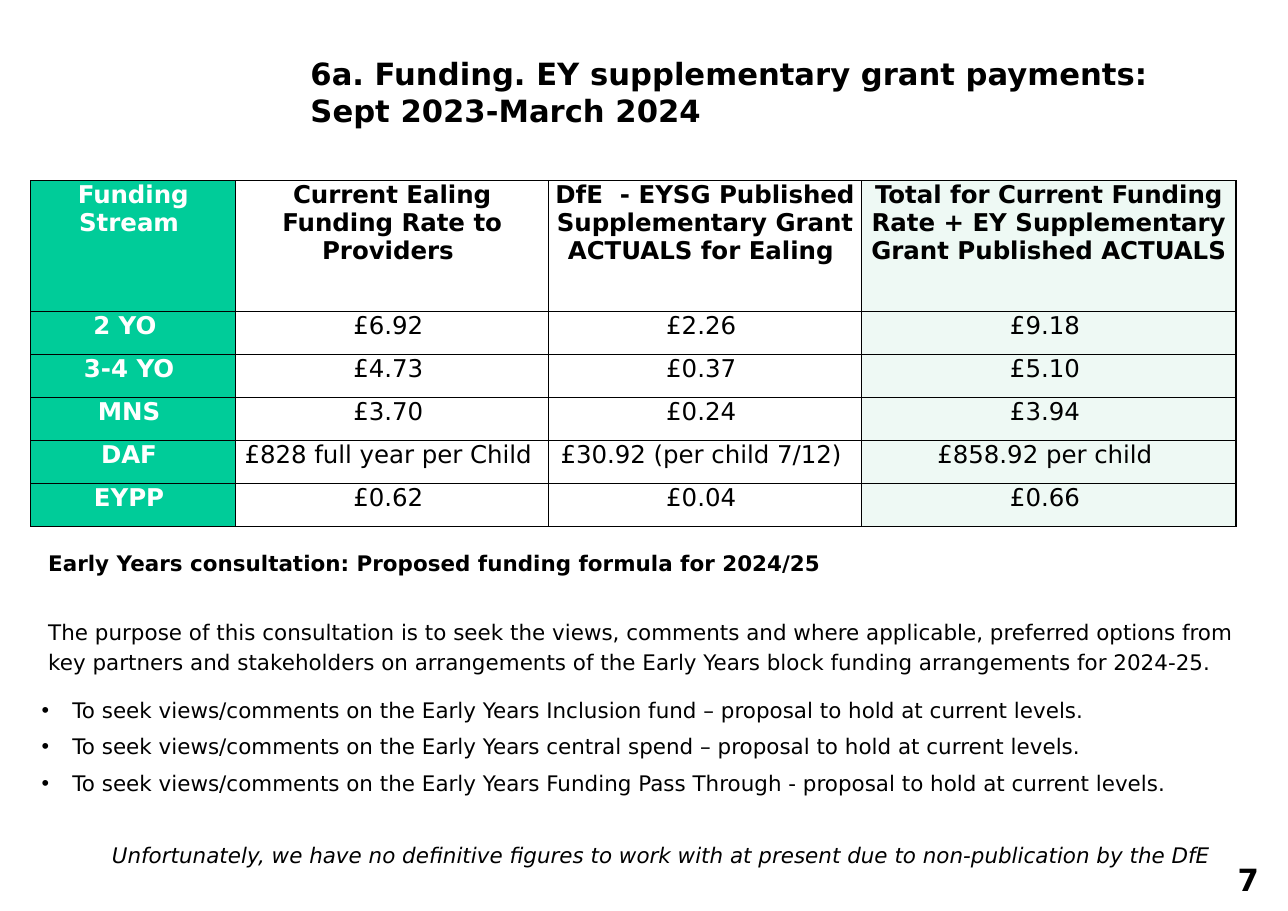
"""Builds the slide on Early Years supplementary grant payments and the 2024/25 consultation."""
from lxml.etree import SubElement
from pptx import Presentation
from pptx.dml.color import RGBColor
from pptx.enum.text import MSO_AUTO_SIZE, PP_ALIGN
from pptx.oxml.ns import qn
from pptx.util import Inches, Pt

BLACK = RGBColor(0, 0, 0)
WHITE = RGBColor(255, 255, 255)
GREEN = RGBColor(0, 204, 153)
MINT = RGBColor(238, 249, 244)


def write(paragraph, text, size, color=BLACK, **font_format):
    """Add one formatted run to a paragraph."""
    run = paragraph.add_run()
    run.text = text
    run.font.name = "DejaVu Sans"
    run.font.size = Pt(size)
    run.font.color.rgb = color
    for name, value in font_format.items():
        setattr(run.font, name, value)


def add_text_frame(left, top, width, height):
    """Add a wrapping text box and return its frame."""
    box = slide.shapes.add_textbox(Inches(left), Inches(top), Inches(width), Inches(height))
    box.text_frame.word_wrap = True
    box.text_frame.auto_size = MSO_AUTO_SIZE.SHAPE_TO_FIT_TEXT
    return box.text_frame


presentation = Presentation()
presentation.slide_width = Inches(11.69)
presentation.slide_height = Inches(8.27)
slide = presentation.slides.add_slide(presentation.slide_layouts[6])

CONSULTATION = [
    ("Early Years consultation: Proposed funding formula for 2024/25",
     {"bold": True}, {}, 0.06, False),
    ("The purpose of this consultation is to seek the views, comments and where applicable, "
     "preferred options from key partners and stakeholders on arrangements of the Early Years "
     "block funding arrangements for 2024-25.",
     {}, {"space_before": Pt(26), "space_after": Pt(7.5)}, 0.06, False),
    ("To seek views/comments on the Early Years Inclusion fund – proposal to hold at current levels.",
     {}, {"space_before": Pt(4.5)}, 0.28, True),
    ("To seek views/comments on the Early Years central spend – proposal to hold at current levels.",
     {}, {"space_before": Pt(4.5)}, 0.28, True),
    ("To seek views/comments on the Early Years Funding Pass Through - proposal to hold at current levels.",
     {}, {"space_before": Pt(4.5)}, 0.28, True),
    ("Unfortunately, we have no definitive figures to work with at present due to non-publication by the DfE ",
     {"italic": True},
     {"space_before": Pt(28), "space_after": Pt(7.5), "alignment": PP_ALIGN.CENTER}, 0.38, False),
]
consultation = add_text_frame(0.28, 4.91, 11.13, 3.08)
for index, (text, font_format, spacing, indent, bulleted) in enumerate(CONSULTATION):
    paragraph = consultation.add_paragraph() if index else consultation.paragraphs[0]
    paragraph.line_spacing = 1.15
    for name, value in spacing.items():
        setattr(paragraph, name, value)
    write(paragraph, text, 14, **font_format)
    properties = paragraph._p.get_or_add_pPr()
    properties.set("marL", str(Inches(indent)))
    properties.set("indent", str(Inches(-indent if bulleted else 0)))
    if bulleted:
        SubElement(properties, qn("a:buFont"), typeface="Arial")
        SubElement(properties, qn("a:buChar"), char="•")

title = add_text_frame(2.72, 0.45, 8.5, 0.77)
write(title.paragraphs[0], "6a. Funding. EY supplementary grant payments:", 20, bold=True)
write(title.add_paragraph(), "Sept 2023-March 2024", 20, bold=True)

FUNDING = [
    ("Funding Stream ", "Current Ealing Funding Rate to Providers ",
     "DfE  - EYSG Published Supplementary Grant ACTUALS for Ealing ",
     "Total for Current Funding Rate + EY Supplementary Grant Published ACTUALS"),
    ("2 YO  ", "£6.92 ", "£2.26 ", "£9.18 "),
    ("3-4 YO ", "£4.73 ", "£0.37 ", "£5.10 "),
    ("MNS ", "£3.70 ", "£0.24 ", "£3.94 "),
    ("DAF ", "£828 full year per Child ", "£30.92 (per child 7/12) ", "£858.92 per child "),
    ("EYPP ", "£0.62 ", "£0.04 ", "£0.66 "),
]
COLUMN_WIDTHS = [1.86, 2.84, 2.84, 3.4]
COLUMN_FILLS = [GREEN, WHITE, WHITE, MINT]
CELL_MARGINS = {"margin_left": 0, "margin_right": 0, "margin_top": 0, "margin_bottom": 0}

funding = slide.shapes.add_table(
    len(FUNDING), len(COLUMN_WIDTHS), Inches(0.28), Inches(1.64), Inches(10.94), Inches(3.15)).table
for column, width in zip(funding.columns, COLUMN_WIDTHS):
    column.width = Inches(width)
for row_index, values in enumerate(FUNDING):
    funding.rows[row_index].height = Inches(0.39 if row_index else 1.19)
    for column_index, value in enumerate(values):
        cell = funding.cell(row_index, column_index)
        for name, margin in CELL_MARGINS.items():
            setattr(cell, name, margin)
        for side in ("a:lnL", "a:lnR", "a:lnT", "a:lnB"):
            border = SubElement(cell._tc.get_or_add_tcPr(), qn(side), w=str(Pt(1)))
            SubElement(SubElement(border, qn("a:solidFill")), qn("a:srgbClr"), val=str(BLACK))
        cell.fill.solid()
        cell.fill.fore_color.rgb = COLUMN_FILLS[column_index]
        paragraph = cell.text_frame.paragraphs[0]
        paragraph.alignment = PP_ALIGN.CENTER
        write(paragraph, value, 16, BLACK if column_index else WHITE,
              bold=row_index == 0 or column_index == 0)

page_number = add_text_frame(11.06, 7.77, 0.54, 0.44).paragraphs[0]
page_number.alignment = PP_ALIGN.CENTER
write(page_number, "7", 20, bold=True)

presentation.save("out.pptx")
